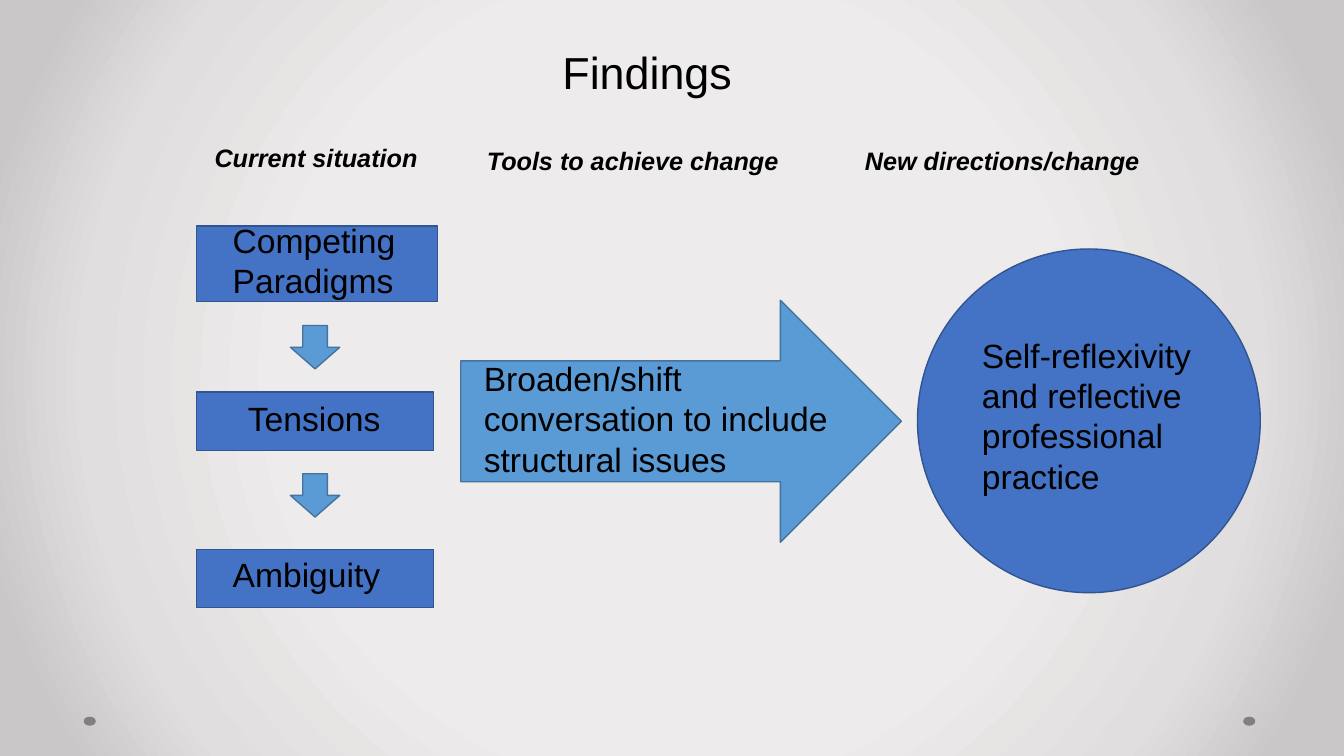
from lxml import etree
from pptx import Presentation
from pptx.dml.color import RGBColor
from pptx.enum.shapes import MSO_SHAPE as Kind
from pptx.enum.text import MSO_AUTO_SIZE as Auto
from pptx.oxml.ns import qn
from pptx.util import Inches, Pt

BLACK = RGBColor(0x00, 0x00, 0x00)
GRAY = RGBColor(0x80, 0x80, 0x80)
BLUE = RGBColor(0x44, 0x72, 0xC4)
NAVY = RGBColor(0x32, 0x54, 0x91)
SKY = RGBColor(0x5B, 0x9B, 0xD5)
STEEL = RGBColor(0x43, 0x73, 0x9E)
STOPS = [(50, RGBColor(0xED, 0xEB, 0xEB)),
         (76, RGBColor(0xE0, 0xDE, 0xDE)),
         (92, RGBColor(0xC9, 0xC7, 0xC7))]

BASE = {"name": "Arial", "color": BLACK}
TITLE = {**BASE, "size": Pt(32)}
BODY = {**BASE, "size": Pt(24)}
HEAD = {**BASE, "size": Pt(18), "bold": True, "italic": True}


def add_glow(slide):
    """Fill the background with a gradient that darkens from the centre."""
    slide.background.fill.solid()
    props = slide.element.find(".//" + qn("p:bgPr"))
    props.remove(props.find(qn("a:solidFill")))
    grad = etree.Element(qn("a:gradFill"), rotWithShape="1")
    props.insert(0, grad)
    stops = etree.SubElement(grad, qn("a:gsLst"))
    for pos, color in STOPS:
        stop = etree.SubElement(stops, qn("a:gs"), pos=str(pos * 1000))
        etree.SubElement(stop, qn("a:srgbClr"), val=str(color))
    ring = etree.SubElement(grad, qn("a:path"), path="circle")
    etree.SubElement(ring, qn("a:fillToRect"),
                     {side: "50000" for side in "ltrb"})


def add_form(slide, kind, box, fill, line=None):
    shape = slide.shapes.add_shape(kind, *map(Inches, box))
    shape.shadow.inherit = False
    shape.fill.solid()
    shape.fill.fore_color.rgb = fill
    if line is None:
        shape.line.fill.background()
    else:
        shape.line.color.rgb = line
        shape.line.width = Pt(1)


def add_text(slide, text, box, form):
    frame = slide.shapes.add_textbox(*map(Inches, box)).text_frame
    frame.word_wrap = True
    frame.auto_size = Auto.SHAPE_TO_FIT_TEXT
    run = frame.paragraphs[0].add_run()
    run.text = text
    for key, value in form.items():
        if key == "color":
            run.font.color.rgb = value
        else:
            setattr(run.font, key, value)


def add_dots(slide, box):
    """Put a dot at each end of the box."""
    left, top, width, height = box
    size = 0.12
    for x in (left, left + width - size):
        add_form(slide, Kind.OVAL, (x, top, size, height), GRAY)


def add_heads(slide, box):
    left, top, width, height = box
    heads = [("Current situation", 0, 0, 2.36),
             ("Tools to achieve change", 2.7, 0.03, 3.12),
             ("New directions/change", 6.45, 0.03, 3.03)]
    for text, x, y, wide in heads:
        add_text(slide, text, (left + x, top + y, wide, height), HEAD)


def add_steps(slide, box):
    """Stack the boxes of the current situation, with arrows between."""
    left, top, width, height = box
    low = 0.58
    steps = [("Competing Paradigms", 0, 2.39, 0.75, 0.26, -0.11, 0.91),
             ("Tensions", 1.65, width, low, 0.41, 0.01, 0.5),
             ("Ambiguity", height - low, width, low, 0.26, 0, 0.5)]
    for text, y, wide, high, dx, dy, tall in steps:
        add_form(slide, Kind.RECTANGLE, (left, top + y, wide, high),
                 BLUE, NAVY)
        add_text(slide, text, (left + dx, top + y + dy, 1.83, tall), BODY)
    for row in range(2):
        spot = (left + 0.93, top + 0.99 + row * 1.47, 0.49, 0.43)
        add_form(slide, Kind.DOWN_ARROW, spot, SKY, STEEL)


def add_tools(slide, box):
    left, top, width, height = box
    add_form(slide, Kind.RIGHT_ARROW, box, SKY, STEEL)
    add_text(slide, "Broaden/shift conversation to include structural issues",
             (left + 0.13, top + 0.52, 3.66, 1.31), BODY)


def add_goal(slide, box):
    left, top, width, height = box
    add_form(slide, Kind.OVAL, box, BLUE, NAVY)
    add_text(slide, "Self-reflexivity and reflective professional practice",
             (left + 0.54, top + 0.8, width - 1.08, 1.72), BODY)


def main():
    deck = Presentation()
    deck.slide_width, deck.slide_height = Inches(13.33), Inches(7.5)
    slide = deck.slides.add_slide(deck.slide_layouts[6])
    add_glow(slide)
    add_dots(slide, (0.83, 7.11, 11.62, 0.09))
    add_text(slide, "Findings", (5.48, 0.39, 1.95, 0.64), TITLE)
    add_heads(slide, (2.03, 1.36, 9.48, 0.4))
    add_steps(slide, (1.95, 2.24, 2.35, 3.79))
    add_tools(slide, (4.57, 2.98, 4.37, 2.4))
    add_goal(slide, (9.1, 2.47, 3.4, 3.41))
    deck.save("out.pptx")


if __name__ == "__main__":
    main()
